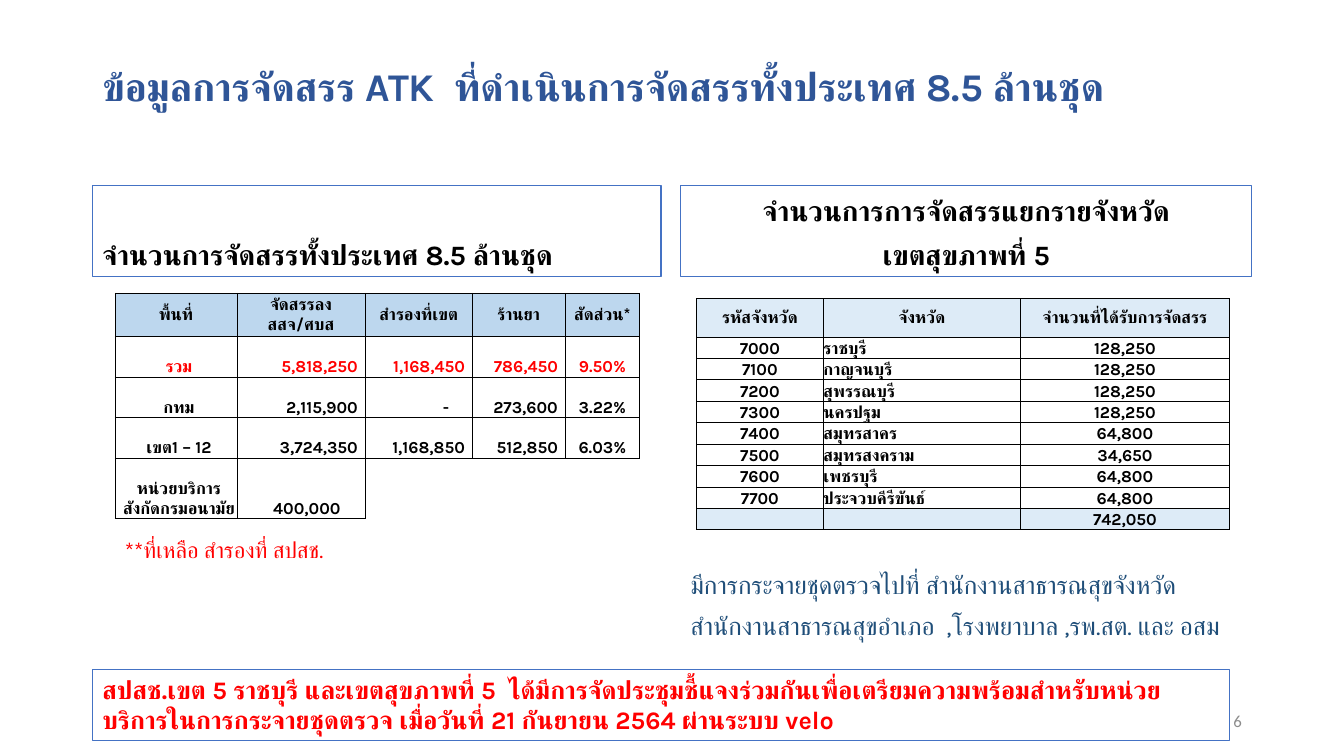
from dataclasses import dataclass

from lxml.etree import SubElement
from pptx import Presentation
from pptx.dml.color import RGBColor
from pptx.enum.shapes import MSO_SHAPE
from pptx.enum.text import MSO_ANCHOR, PP_ALIGN
from pptx.oxml.ns import qn
from pptx.slide import Slide
from pptx.text.text import _Paragraph
from pptx.util import Cm, Pt


@dataclass(frozen=True)
class Theme:
    font: str = "Karla"
    number_font: str = "Calibri"
    title: str = "2F5597"
    ink: str = "000000"
    alert: str = "FF0000"
    detail: str = "1F4E79"
    muted: str = "8C8C8C"
    outline: str = "4472C4"
    strong_fill: str = "BDD7EE"
    pale_fill: str = "DDEBF7"
    title_size: int = 28
    heading_size: int = 20
    body_size: int = 18
    note_size: int = 16
    small_size: int = 12


THEME = Theme()


@dataclass(frozen=True)
class TextStyle:
    size: int
    color: str
    bold: bool = False
    font: str = THEME.font
    align: PP_ALIGN = PP_ALIGN.LEFT
    line_spacing: float = 1.0
    space_before: int = 0


@dataclass(frozen=True)
class TextBlock:
    text: str
    left: float
    top: float
    width: float
    height: float
    style: TextStyle
    anchor: MSO_ANCHOR = MSO_ANCHOR.TOP
    outlined: bool = False


@dataclass(frozen=True)
class TableCell:
    text: str = ""
    align: PP_ALIGN = PP_ALIGN.CENTER
    color: str = THEME.ink
    fill: str | None = None
    anchor: MSO_ANCHOR = MSO_ANCHOR.BOTTOM
    left_margin: float = 0
    right_margin: float = 0
    borders: str = "LRTB"


@dataclass(frozen=True)
class Grid:
    left: float
    top: float
    columns: list[float]
    rows: list[float]
    cells: list[list[TableCell]]


def format_paragraph(paragraph: _Paragraph, style: TextStyle) -> None:
    paragraph.alignment = style.align
    paragraph.line_spacing = style.line_spacing
    paragraph.space_before = Pt(style.space_before)
    for run in paragraph.runs:
        run.font.size = Pt(style.size)
        run.font.bold = style.bold
        run.font.name = style.font
        run.font.color.rgb = RGBColor.from_string(style.color)
        SubElement(run.font._element, qn("a:cs"), typeface=style.font)


def add_text_block(slide: Slide, block: TextBlock) -> None:
    box = Cm(block.left), Cm(block.top), Cm(block.width), Cm(block.height)
    if block.outlined:
        shape = slide.shapes.add_shape(MSO_SHAPE.RECTANGLE, *box)
        shape.shadow.inherit = False
        shape.fill.background()
        shape.line.color.rgb = RGBColor.from_string(THEME.outline)
        shape.line.width = Pt(0.75)
    else:
        shape = slide.shapes.add_textbox(*box)
    text_frame = shape.text_frame
    text_frame.word_wrap = True
    text_frame.vertical_anchor = block.anchor
    text_frame.text = block.text
    for paragraph in text_frame.paragraphs:
        format_paragraph(paragraph, block.style)


def add_grid(slide: Slide, grid: Grid) -> None:
    frame = slide.shapes.add_table(
        len(grid.rows), len(grid.columns), Cm(grid.left), Cm(grid.top),
        Cm(sum(grid.columns)), Cm(sum(grid.rows)))
    table = frame.table
    # The built-in "No Style, No Grid" table style
    table._tbl.tblPr.find(qn("a:tableStyleId")).text = "{2D5ABB26-0587-4C30-8999-92F81FD0307C}"
    table.first_row = table.horz_banding = False
    for column, width in zip(table.columns, grid.columns):
        column.width = Cm(width)
    for row, height, contents in zip(table.rows, grid.rows, grid.cells):
        row.height = Cm(height)
        for cell, content in zip(row.cells, contents):
            cell.margin_left, cell.margin_right = Cm(content.left_margin), Cm(content.right_margin)
            cell.margin_top = cell.margin_bottom = 0
            cell.vertical_anchor = content.anchor
            cell.text_frame.text = content.text
            paragraph = cell.text_frame.paragraphs[0]
            format_paragraph(paragraph, TextStyle(
                THEME.small_size, content.color, bold=True, align=content.align))
            paragraph._p.get_or_add_endParaRPr().set("sz", str(THEME.small_size * 100))
            properties = cell._tc.get_or_add_tcPr()
            for side in "LRTB":
                line = SubElement(properties, qn(f"a:ln{side}"), w=str(Pt(0.5)))
                if side in content.borders:
                    solid = SubElement(line, qn("a:solidFill"))
                    SubElement(solid, qn("a:srgbClr"), val=THEME.ink)
                else:
                    SubElement(line, qn("a:noFill"))
            if content.fill:
                cell.fill.solid()
                cell.fill.fore_color.rgb = RGBColor.from_string(content.fill)
            else:
                cell.fill.background()


def header_row(labels: list[str], fill: str) -> list[TableCell]:
    return [TableCell(label, fill=fill, anchor=MSO_ANCHOR.MIDDLE) for label in labels]


def area_row(area: str, *amounts: str, share: str, color: str = THEME.ink) -> list[TableCell]:
    return [
        TableCell(area, color=color, left_margin=0.15),
        *(TableCell(amount, PP_ALIGN.RIGHT, color, right_margin=0.58 if amount == "-" else 0.18)
          for amount in amounts),
        TableCell(share, color=color),
    ]


def province_row(code: str, province: str, amount: str) -> list[TableCell]:
    return [TableCell(code), TableCell(province, PP_ALIGN.LEFT), TableCell(amount)]


HEADING = TextStyle(THEME.heading_size, THEME.ink, True, line_spacing=0.9, space_before=10)
CENTERED_HEADING = TextStyle(THEME.heading_size, THEME.ink, True, align=PP_ALIGN.CENTER,
                             line_spacing=0.9, space_before=10)

TEXT_BLOCKS = [
    TextBlock("ข้อมูลการจัดสรร ATK  ที่ดำเนินการจัดสรรทั้งประเทศ 8.5 ล้านชุด", 2.33, 1.01, 29.21, 2.46,
              TextStyle(THEME.title_size, THEME.title, True, line_spacing=0.9), MSO_ANCHOR.MIDDLE),
    TextBlock("จำนวนการจัดสรรทั้งประเทศ 8.5 ล้านชุด", 2.33, 4.68, 14.33, 2.29,
              HEADING, MSO_ANCHOR.BOTTOM, True),
    TextBlock("จำนวนการการจัดสรรแยกรายจังหวัด\nเขตสุขภาพที่ 5", 17.15, 4.68, 14.4, 2.29,
              CENTERED_HEADING, MSO_ANCHOR.BOTTOM, True),
    TextBlock("มีการกระจายชุดตรวจไปที่ สำนักงานสาธารณสุขจังหวัด\n"
              "สำนักงานสาธารณสุขอำเภอ  ,โรงพยาบาล ,รพ.สต. และ อสม", 17.15, 14.3, 15.44, 2.5,
              TextStyle(THEME.body_size, THEME.detail, line_spacing=0.9, space_before=10)),
    TextBlock("6", 23.93, 17.65, 7.62, 1.01,
              TextStyle(THEME.small_size, THEME.muted, font=THEME.number_font,
                        align=PP_ALIGN.RIGHT), MSO_ANCHOR.MIDDLE),
    TextBlock("**ที่เหลือ สำรองที่ สปสช.", 2.9, 13.39, 8.51, 0.94,
              TextStyle(THEME.note_size, THEME.alert)),
    TextBlock("สปสช.เขต 5 ราชบุรี และเขตสุขภาพที่ 5  ได้มีการจัดประชุมชี้แจงร่วมกันเพื่อเตรียมความพร้อม"
              "สำหรับหน่วยบริการในการกระจายชุดตรวจ เมื่อวันที่ 21 กันยายน 2564 ผ่านระบบ velo",
              2.33, 16.87, 28.65, 1.8, TextStyle(THEME.body_size, THEME.alert, True), outlined=True),
]

NATIONAL_GRID = Grid(2.9, 7.39, [3.07, 3.23, 2.7, 2.34, 1.88], [1.09, 1.02, 1.02, 1.02, 1.53], [
    header_row(["พื้นที่", "จัดสรรลง สสจ/ศบส", "สำรองที่เขต", "ร้านยา", "สัดส่วน*"], THEME.strong_fill),
    area_row("รวม", "5,818,250", "1,168,450", "786,450", share="9.50%", color=THEME.alert),
    area_row("กทม", "2,115,900", "-", "273,600", share="3.22%"),
    area_row("เขต1 – 12", "3,724,350", "1,168,850", "512,850", share="6.03%"),
    [TableCell("หน่วยบริการ\vสังกัดกรมอนามัย", left_margin=0.15), TableCell("400,000", left_margin=0.3),
     TableCell(borders="LT"), TableCell(borders="T"), TableCell(borders="T")],
])

PROVINCE_GRID = Grid(17.55, 7.52, [3.2, 4.97, 5.26], [0.97] + [0.54] * 9, [
    header_row(["รหัสจังหวัด", "จังหวัด", "จำนวนที่ได้รับการจัดสรร"], THEME.pale_fill),
    province_row("7000", "ราชบุรี", "128,250"),
    province_row("7100", "กาญจนบุรี", "128,250"),
    province_row("7200", "สุพรรณบุรี", "128,250"),
    province_row("7300", "นครปฐม", "128,250"),
    province_row("7400", "สมุทรสาคร", "64,800"),
    province_row("7500", "สมุทรสงคราม", "34,650"),
    province_row("7600", "เพชรบุรี", "64,800"),
    province_row("7700", "ประจวบคีรีขันธ์", "64,800"),
    [TableCell(text, fill=THEME.pale_fill) for text in ("", "", "742,050")],
])


def main() -> None:
    presentation = Presentation()
    presentation.slide_width, presentation.slide_height = Cm(33.87), Cm(19.05)
    slide = presentation.slides.add_slide(presentation.slide_layouts[6])
    for block in TEXT_BLOCKS:
        add_text_block(slide, block)
    for grid in (NATIONAL_GRID, PROVINCE_GRID):
        add_grid(slide, grid)
    presentation.save("out.pptx")


if __name__ == "__main__":
    main()
